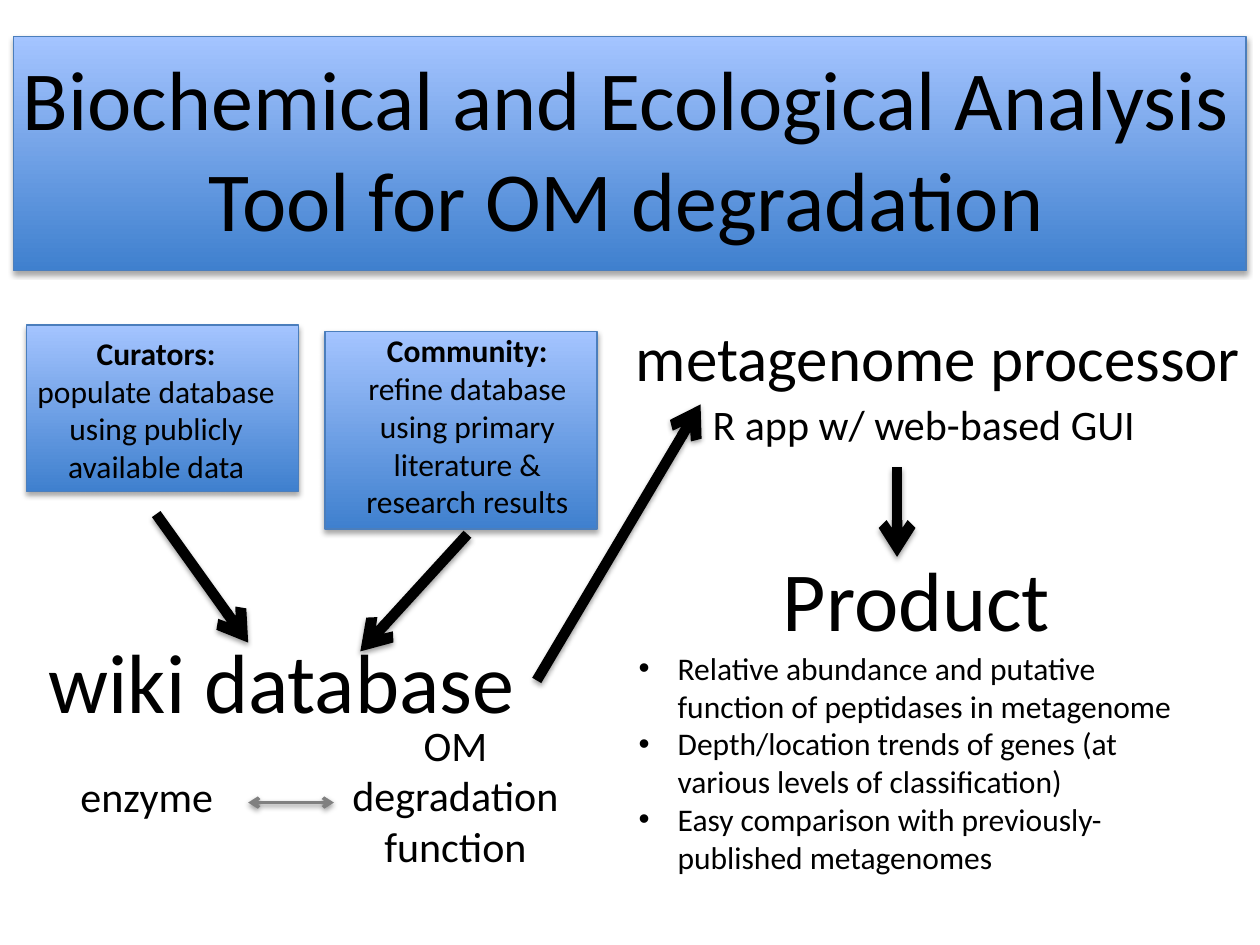
from lxml import etree
from pptx import Presentation
from pptx.dml.color import RGBColor
from pptx.enum import shapes as sh, text as tx
from pptx.oxml.ns import qn
from pptx.util import Inches, Pt

HUES = {"ink": "000000", "gray": "808080", "edge": "4B7EBC",
        "deep": "3F80CE", "pale": "A4C4FF"}

TITLE = "Biochemical and Ecological Analysis Tool for OM degradation"

# Panels: left, top, width, height
PANELS = [(0.11, 0.29, 9.78, 1.86), (2.58, 2.63, 2.16, 1.57),
          (0.21, 2.58, 2.16, 1.32)]

# Text boxes: place, then paragraphs of (text, size, bold) runs
LABELS = [
    ((0.21, 4.95, 4.05, 0.91), [("wiki database", 48, False)]),
    ((0.36, 6.07, 1.61, 0.5), [("enzyme", 24, False)]),
    ((2.65, 5.66, 1.93, 1.31), [("OM degradation function", 24, False)]),
    ((0.11, 2.6, 2.26, 1.31), [
        ("Curators:\v", 18, True),
        ("populate database using publicly available data", 18, False)]),
    ((2.58, 2.58, 2.26, 1.62), [
        ("Community:\v", 18, True),
        ("refine database using primary literature & research results",
         18, False)]),
    ((4.74, 2.31, 5.26, 1.31), [
        (" ", 48, False), ("metagenome processor\v", 36, False),
        ("R app w/ web-based GUI ", 24, False)]),
]

PRODUCT = (4.97, 4.3, 4.61, 2.83)
POINTS = [
    "Relative abundance and putative function of peptidases in metagenome",
    "Depth/location trends of genes (at various levels of classification)",
    "Easy comparison with previously-published metagenomes",
]

# Arrows: start, end, colour, width, arrowheads
ARROWS = [
    ((1.97, 6.37), (2.65, 6.37), "gray", 2, ("headEnd", "tailEnd")),
    ((3.71, 4.24), (2.86, 5.17), "ink", 6, ("tailEnd",)),
    ((1.24, 4.08), (1.97, 5.1), "ink", 6, ("tailEnd",)),
    ((4.26, 5.4), (5.56, 3.21), "ink", 6, ("tailEnd",)),
    ((7.12, 3.71), (7.12, 4.42), "ink", 6, ("tailEnd",)),
]


def rgb(name):
    return RGBColor.from_string(HUES[name])


def shade(shape, dist, alpha):
    """Add a soft shadow straight below; call after the line is set."""
    fx = etree.SubElement(shape._element.spPr, qn("a:effectLst"))
    cast = etree.SubElement(
        fx, qn("a:outerShdw"), blurRad=str(Pt(3.1)), dist=str(Pt(dist)),
        dir="5400000", rotWithShape="0")
    hue = etree.SubElement(cast, qn("a:srgbClr"), val=HUES["ink"])
    etree.SubElement(hue, qn("a:alpha"), val=str(alpha * 1000))


def style(font, size, bold=False):
    font.name, font.size, font.bold = "Calibri", Pt(size), bold
    font.color.rgb = rgb("ink")


def add_panel(slide, place):
    box = slide.shapes.add_shape(sh.MSO_SHAPE.RECTANGLE, *map(Inches, place))
    box.fill.gradient()
    box.fill.gradient_angle = 90
    for stop, name in zip(box.fill.gradient_stops, ("deep", "pale")):
        stop.color.rgb = rgb(name)
    box.line.color.rgb = rgb("edge")
    box.line.width = Pt(0.75)
    shade(box, 1.8, 35)


def add_text(slide, place):
    frame = slide.shapes.add_textbox(*map(Inches, place)).text_frame
    frame.word_wrap = True
    frame.paragraphs[0].alignment = tx.PP_ALIGN.CENTER
    return frame


def add_label(slide, place, runs):
    para = add_text(slide, place).paragraphs[0]
    for words, size, bold in runs:
        run = para.add_run()
        run.text = words.rstrip("\v")
        style(run.font, size, bold)
        if words.endswith("\v"):
            para.add_line_break()


def add_product(slide):
    frame = add_text(slide, PRODUCT)
    head = frame.paragraphs[0]
    head.text = "Product"
    style(head.font, 48)
    for point in POINTS:
        para = frame.add_paragraph()
        para.text = point
        para.alignment = tx.PP_ALIGN.LEFT
        style(para.font, 18)
        props = para._p.get_or_add_pPr()
        props.set("marL", str(Inches(0.31)))
        props.set("indent", str(-Inches(0.31)))
        mark = etree.Element(qn("a:buChar"), char="•")
        face = etree.Element(qn("a:buFont"), typeface="Arial")
        props.insert(0, mark)
        props.insert(0, face)


def add_arrow(slide, start, end, hue, width, heads):
    arrow = slide.shapes.add_connector(
        sh.MSO_CONNECTOR.STRAIGHT, *map(Inches, start + end))
    arrow.line.color.rgb = rgb(hue)
    arrow.line.width = Pt(width)
    for head in heads:
        etree.SubElement(arrow.line._ln, qn("a:" + head), type="arrow")
    shade(arrow, 1.6, 38)


def set_title(slide):
    title = slide.shapes.title
    title.left, title.top = Inches(-0.28), Inches(0.32)
    title.width, title.height = Inches(10.5), Inches(1.72)
    frame = title.text_frame
    frame.text = TITLE
    frame.word_wrap = True
    frame.auto_size = tx.MSO_AUTO_SIZE.NONE
    frame.vertical_anchor = tx.MSO_ANCHOR.TOP
    frame.paragraphs[0].alignment = tx.PP_ALIGN.CENTER
    style(frame.paragraphs[0].font, 48)
    # Bring the title in front of its panel
    slide.shapes._spTree.append(title._element)


def main():
    deck = Presentation()
    deck.slide_width, deck.slide_height = Inches(10), Inches(7.5)
    slide = deck.slides.add_slide(deck.slide_layouts[5])
    for place in PANELS:
        add_panel(slide, place)
    for place, runs in LABELS:
        add_label(slide, place, runs)
    add_product(slide)
    for arrow in ARROWS:
        add_arrow(slide, *arrow)
    set_title(slide)
    deck.save("out.pptx")


if __name__ == "__main__":
    main()
